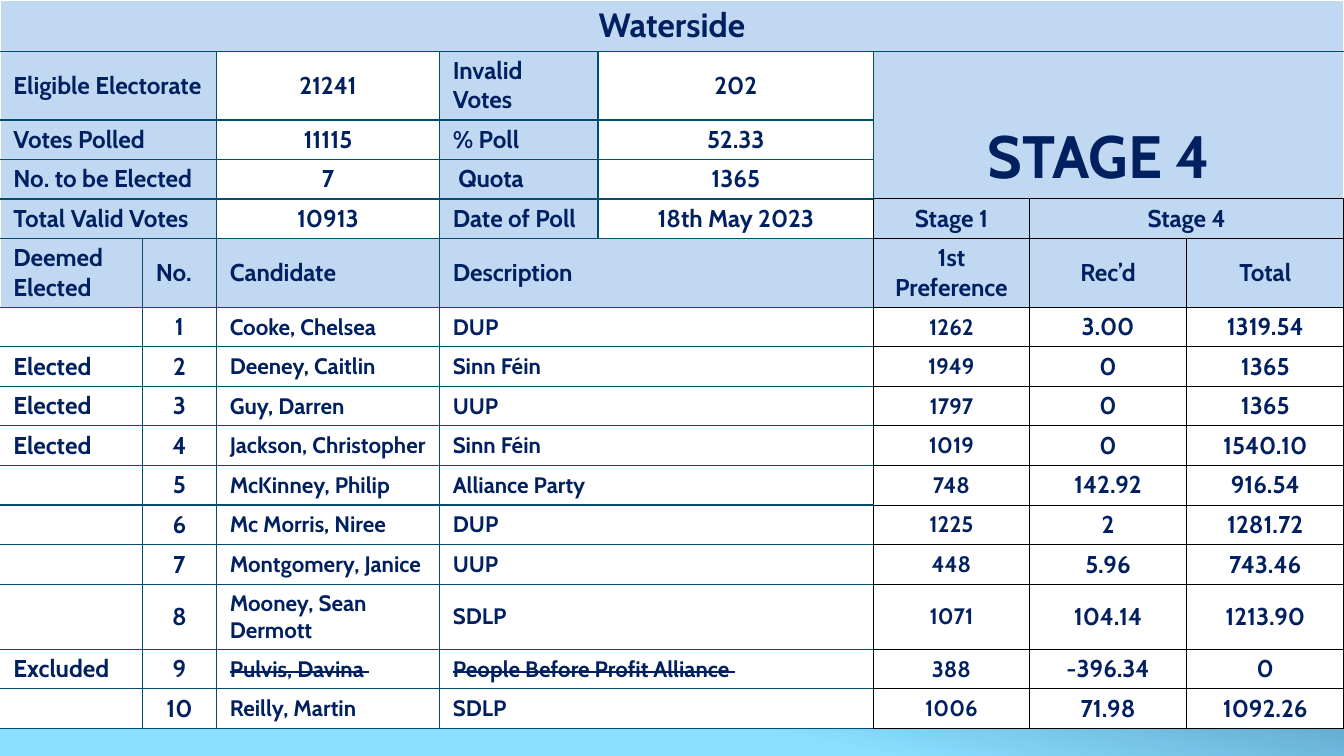
from lxml import etree
from pptx import Presentation
from pptx.dml.color import RGBColor
from pptx.enum import text
from pptx.oxml import ns
from pptx.util import Inches, Pt

THEME = {
    "font": "Cabin", "ink": "002060", "head": "C1D8F2", "body": "FFFFFF",
    "title": 18, "stage": 32, "label": 13, "detail": 12,
    "backdrop": [(0.42, "0D3868"), (0.82, "8ADFFF")],
    "teal": ("004E6C", 0.75), "black": ("000000", 0.5), "white": ("FFFFFF", 1),
}

WARD = "Waterside"
STAGE = "STAGE 4 "
SUMMARY = [
    ("Eligible Electorate", "21241", "Invalid Votes", "202"),
    ("Votes Polled", "11115", "% Poll", "52.33"),
    ("No. to be Elected", "7", " Quota", "1365"),
    ("Total Valid Votes", "10913", "Date of Poll", "18th May 2023"),
]
HEADINGS = ("Deemed Elected", "No.", "Candidate", "Description",
            "1st Preference", "Rec’d", "Total")
CANDIDATES = [
    ("", "Cooke, Chelsea", "DUP", "1262", "3.00", "1319.54"),
    ("Elected", "Deeney, Caitlin", "Sinn Féin", "1949", "0", "1365"),
    ("Elected", "Guy, Darren", "UUP", "1797", "0", "1365"),
    ("Elected", "Jackson, Christopher", "Sinn Féin", "1019", "0", "1540.10"),
    ("", "McKinney, Philip", "Alliance Party", "748", "142.92", "916.54"),
    ("", "Mc Morris, Niree", "DUP", "1225", "2", "1281.72"),
    ("", "Montgomery, Janice", "UUP", "448", "5.96", "743.46"),
    ("", "Mooney, Sean Dermott", "SDLP", "1071", "104.14", "1213.90"),
    ("Excluded", "Pulvis, Davina ", "People Before Profit Alliance ",
     "388", "-396.34", "0"),
    ("", "Reilly, Martin", "SDLP", "1006", "71.98", "1092.26"),
]

COLUMN_WIDTHS = [1.06, 0.55, 1.66, 1.18, 2.05, 1.16, 1.17, 1.17]
TITLE_HEIGHT, HEADING_HEIGHT, ROW_HEIGHT = 0.37, 0.48, 0.28
STAGE_ROW = len(SUMMARY)
HEADING_ROW = STAGE_ROW + 1
ROW_COUNT = HEADING_ROW + 1 + len(CANDIDATES)
FIRST_COUNT_COLUMN = 5
# Each heading's first column and the number of columns it covers
FIELDS = [(0, 1), (1, 1), (2, 1), (3, 2), (5, 1), (6, 1), (7, 1)]


def borders_for(row, column, across):
    """Left, right, top and bottom lines of a cell, by its place in the grid."""
    teal, black, white = THEME["teal"], THEME["black"], THEME["white"]
    if row == 0:
        return white, white, white, teal
    if column >= FIRST_COUNT_COLUMN:
        return (teal, white, teal, black) if row < STAGE_ROW else (black,) * 4
    left = white if column == 0 else teal
    meets_counts = row >= STAGE_ROW and column + across == FIRST_COUNT_COLUMN
    return left, black if meets_counts else teal, teal, teal


def draw_borders(cell, lines):
    properties = cell._tc.get_or_add_tcPr()
    for index, (side, (color, width)) in enumerate(zip("LRTB", lines)):
        line = etree.Element(ns.qn(f"a:ln{side}"), w=str(Pt(width)))
        fill = etree.SubElement(line, ns.qn("a:solidFill"))
        etree.SubElement(fill, ns.qn("a:srgbClr"), val=color)
        properties.insert(index, line)


def style_run(run, size, strike=False):
    run.font.name = THEME["font"]
    run.font.size = Pt(size)
    run.font.bold = True
    run.font.color.rgb = RGBColor.from_string(THEME["ink"])
    if strike:
        run._r.get_or_add_rPr().set("strike", "sngStrike")


def put(table, row, column, wording, fill="head", size="label", centered=False,
        strike=False, down=1, across=1):
    cell = table.cell(row, column)
    if down * across > 1:
        cell.merge(table.cell(row + down - 1, column + across - 1))
    for r in range(row, row + down):
        for c in range(column, column + across):
            part = table.cell(r, c)
            part.fill.solid()
            part.fill.fore_color.rgb = RGBColor.from_string(THEME[fill])
            draw_borders(part, borders_for(row, column, across))
    cell.vertical_anchor = text.MSO_ANCHOR.MIDDLE
    cell.margin_left = cell.margin_right = Inches(0.1)
    cell.margin_top = cell.margin_bottom = Pt(2.7)
    paragraph = cell.text_frame.paragraphs[0]
    if centered:
        paragraph.alignment = text.PP_ALIGN.CENTER
    if wording:
        paragraph.text = wording
        style_run(paragraph.runs[0], THEME[size], strike)
    else:  # keeps an empty cell from stretching its row
        etree.SubElement(paragraph._p, ns.qn("a:endParaRPr"),
                         sz=str(THEME[size] * 100))
    return cell


def fill_summary(table):
    put(table, 0, 0, WARD, size="title", centered=True,
        across=len(COLUMN_WIDTHS))
    for row, (label, value, second_label, second_value) in enumerate(SUMMARY, 1):
        put(table, row, 0, label, across=2)
        put(table, row, 2, value, "body", centered=True)
        put(table, row, 3, second_label)
        put(table, row, 4, second_value, "body", centered=True)
    stage = put(table, 1, FIRST_COUNT_COLUMN, STAGE, size="stage",
                centered=True, down=3, across=3)
    stage.vertical_anchor = text.MSO_ANCHOR.BOTTOM
    spacer = stage.text_frame.paragraphs[0].add_run()
    spacer.text = " "
    style_run(spacer, THEME["label"])
    put(table, STAGE_ROW, 5, "Stage 1", centered=True)
    put(table, STAGE_ROW, 6, "Stage 4", centered=True, across=2)


def fill_candidates(table):
    for (column, across), heading in zip(FIELDS, HEADINGS):
        put(table, HEADING_ROW, column, heading, across=across,
            centered=column >= FIRST_COUNT_COLUMN)
    for number, (status, *details) in enumerate(CANDIDATES, 1):
        values = (status, str(number), *details)
        for (column, across), value in zip(FIELDS, values):
            put(table, HEADING_ROW + number, column, value, "body",
                size="detail" if column in (2, 3, 5) else "label",
                centered=column == 1 or column >= FIRST_COUNT_COLUMN,
                strike=status == "Excluded" and column in (2, 3),
                across=across)


def main():
    deck = Presentation()
    deck.slide_width = Inches(10)
    deck.slide_height = deck.slide_width * 9 // 16
    slide = deck.slides.add_slide(deck.slide_layouts[6])

    backdrop = slide.background.fill
    backdrop.gradient()
    backdrop.gradient_angle = 360 - 102
    for stop, (position, color) in zip(backdrop.gradient_stops, THEME["backdrop"]):
        stop.position = position
        stop.color.rgb = RGBColor.from_string(color)

    table = slide.shapes.add_table(ROW_COUNT, len(COLUMN_WIDTHS), 0, 0,
                                   Inches(10), Inches(5.15)).table
    table.first_row = table.horz_banding = False
    for column, width in zip(table.columns, COLUMN_WIDTHS):
        column.width = Inches(width)
    special_heights = {0: TITLE_HEIGHT, HEADING_ROW: HEADING_HEIGHT}
    for index, row in enumerate(table.rows):
        row.height = Inches(special_heights.get(index, ROW_HEIGHT))

    fill_summary(table)
    fill_candidates(table)
    deck.save("out.pptx")


if __name__ == "__main__":
    main()
